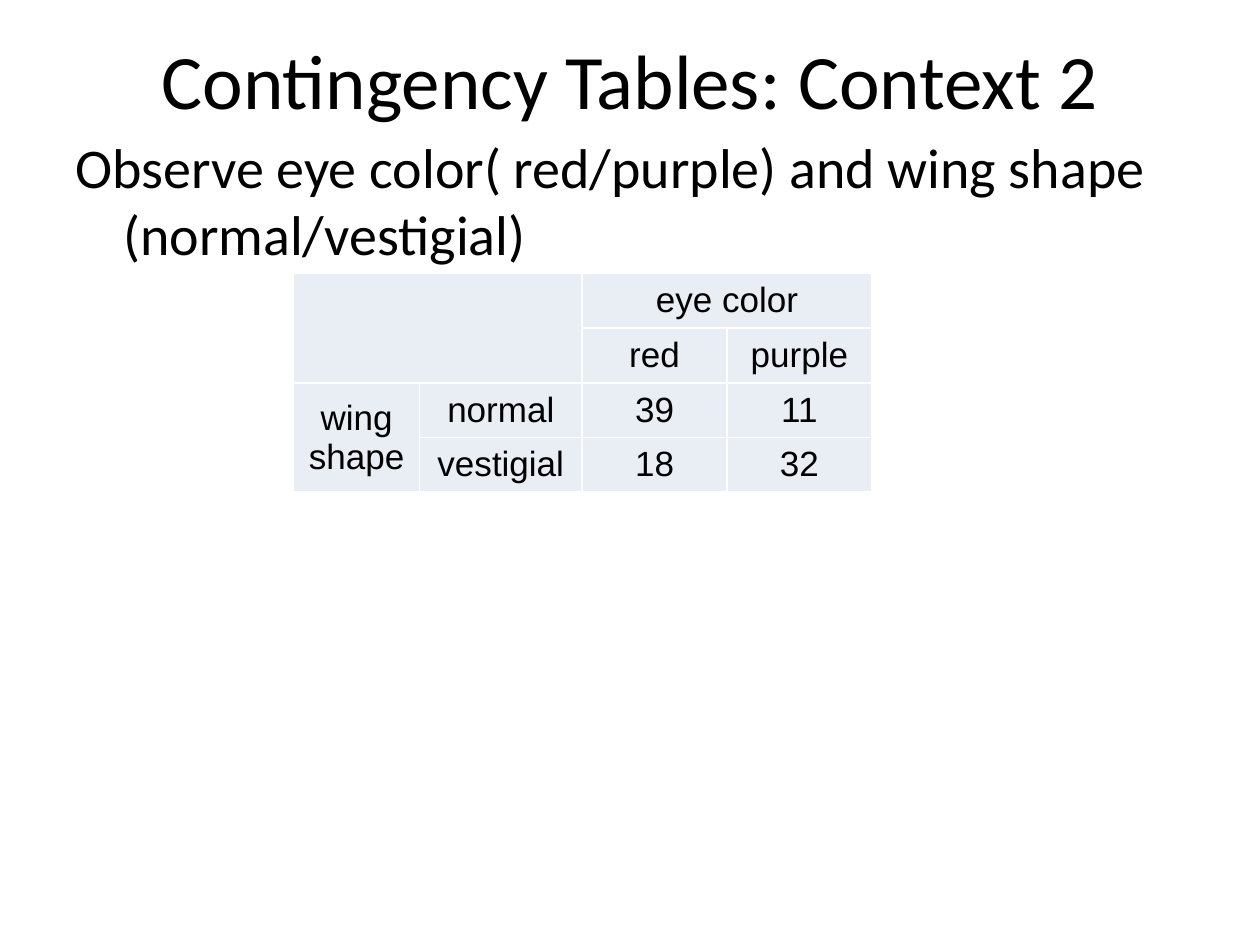
"""Build a slide with a contingency table of eye color and wing shape."""
from pptx import Presentation
from pptx.dml.color import RGBColor
from pptx.enum.text import MSO_ANCHOR, PP_ALIGN
from pptx.oxml import parse_xml
from pptx.oxml.ns import nsdecls
from pptx.util import Inches, Pt

COLORS = {"text": "000000", "cell": "E9EDF4", "border": "FFFFFF"}
FORMATS = {
    "title": {"name": "Calibri", "size": Pt(44)},
    "body": {"name": "Calibri", "size": Pt(32)},
    "cell": {"name": "Arial", "size": Pt(20)},
}


def write(frame, text, style, align):
    frame.word_wrap = True
    line = frame.paragraphs[0]
    line.alignment = align
    run = line.add_run()
    run.text = text
    for key, value in FORMATS[style].items():
        setattr(run.font, key, value)
    run.font.color.rgb = RGBColor.from_string(COLORS["text"])
    return line


deck = Presentation()
deck.slide_width, deck.slide_height = Inches(10), Inches(7.5)
slide = deck.slides.add_slide(deck.slide_layouts[5])

title = slide.shapes.title
place = {"left": 0.5, "top": 0, "width": 9, "height": 1.25}
for key, value in place.items():
    setattr(title, key, Inches(value))
title.text_frame.vertical_anchor = MSO_ANCHOR.MIDDLE
write(title.text_frame, "Contingency Tables: Context 2", "title", PP_ALIGN.CENTER)

body = slide.shapes.add_textbox(Inches(0.5), Inches(1), Inches(9), Inches(4.95))
prompt = "Observe eye color( red/purple) and wing shape (normal/vestigial)"
line = write(body.text_frame, prompt, "body", PP_ALIGN.LEFT)
indent = Inches(0.38)
props = line._p.get_or_add_pPr()
props.set("marL", str(indent))
props.set("indent", str(-indent))

rows = [
    ["", "", "eye color", ""],
    ["", "", "red", "purple"],
    ["wing shape", "normal", "39", "11"],
    ["", "vestigial", "18", "32"],
]
widths = [1, 1.29, 1.15, 1.15]
height = 0.41
table = slide.shapes.add_table(
    len(rows), len(widths), Inches(2.33), Inches(2.17),
    Inches(sum(widths)), Inches(height * len(rows)),
).table
table.first_row = table.horz_banding = False
for col, width in zip(table.columns, widths):
    col.width = Inches(width)

for r, row in enumerate(rows):
    table.rows[r].height = Inches(height)
    for c, text in enumerate(row):
        cell = table.cell(r, c)
        cell.vertical_anchor = MSO_ANCHOR.MIDDLE
        if text:
            write(cell.text_frame, text, "cell", PP_ALIGN.CENTER)
        props = cell._tc.get_or_add_tcPr()
        for side in ("lnL", "lnR", "lnT", "lnB"):
            props.append(parse_xml(
                f'<a:{side} {nsdecls("a")} w="{Pt(1)}"><a:solidFill>'
                f'<a:srgbClr val="{COLORS["border"]}"/></a:solidFill></a:{side}>'
            ))
        cell.fill.solid()
        cell.fill.fore_color.rgb = RGBColor.from_string(COLORS["cell"])

for start, end in [((0, 0), (1, 1)), ((0, 2), (0, 3)), ((2, 0), (3, 0))]:
    table.cell(*start).merge(table.cell(*end))

deck.save("out.pptx")
